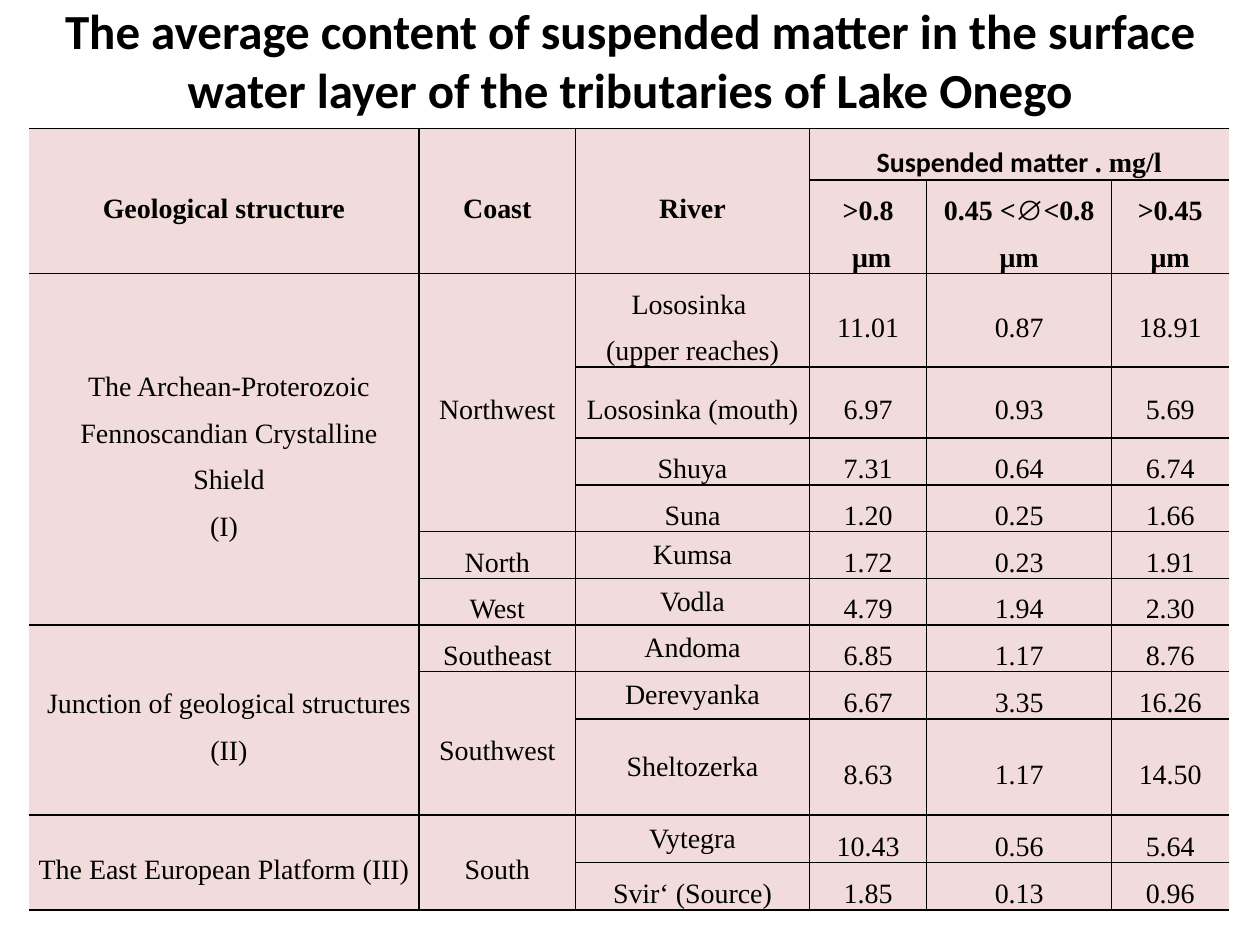
from dataclasses import dataclass

from lxml.etree import SubElement
from pptx import Presentation
from pptx.dml.color import RGBColor
from pptx.enum.text import MSO_ANCHOR as Anchor, MSO_AUTO_SIZE as AutoSize, PP_ALIGN as Align
from pptx.oxml.ns import qn
from pptx.util import Cm, Pt


@dataclass(frozen=True)
class Theme:
    """Colours, fonts and type sizes of the deck."""
    ink: RGBColor = RGBColor(0, 0, 0)
    cell: RGBColor = RGBColor(0xF2, 0xDC, 0xDB)
    heading: str = "Calibri"
    body: str = "Times New Roman"
    symbol: str = "Arial"
    title_size: Pt = Pt(28)
    cell_size: Pt = Pt(16)
    border: Pt = Pt(1)


THEME = Theme()
TITLE = "The average content of suspended matter in the surface water layer of the tributaries of Lake Onego"
TITLE_BOX = (0, 0, 25.4, 2.39)
TABLE_BOX = (0.58, 2.59, 24.2, 16.33)
COLUMN_WIDTHS = [7.87, 3.15, 4.72, 2.36, 3.73, 2.36]
ROW_HEIGHTS = [0.96] + [1.44] * 3 + [0.48] * 5 + [0.96, 1.93, 0.96, 0.96]
HEADER_ROWS = 2
RIVER_COLUMN = 2
SINGLE_SPACED_ROWS = range(6, 12)

HEADERS = {
    (0, 0): ["Geological structure"],
    (0, 1): ["Coast"],
    (0, 2): ["River"],
    (0, 3): [[("Suspended matter ", THEME.heading), (". mg/l", THEME.body)]],
    (1, 3): [">0.8", " μm"],
    (1, 4): [[("0.45 <", THEME.body), ("∅", THEME.symbol), ("<0.8", THEME.body)], "μm"],
    (1, 5): [">0.45", "μm"],
}
STRUCTURES = {
    2: ["The Archean-Proterozoic Fennoscandian Crystalline Shield", "(I)"],
    8: ["Junction of geological structures (II)"],
    11: ["The East European Platform (III)"],
}
COASTS = {2: "Northwest", 6: "North", 7: "West", 8: "Southeast", 9: "Southwest", 11: "South"}
RIVERS = [
    (["Lososinka ", "(upper reaches)"], "11.01", "0.87", "18.91"),
    (["Lososinka (mouth)"], "6.97", "0.93", "5.69"),
    (["Shuya"], "7.31", "0.64", "6.74"),
    (["Suna"], "1.20", "0.25", "1.66"),
    (["Kumsa"], "1.72", "0.23", "1.91"),
    (["Vodla"], "4.79", "1.94", "2.30"),
    (["Andoma"], "6.85", "1.17", "8.76"),
    (["Derevyanka"], "6.67", "3.35", "16.26"),
    (["Sheltozerka"], "8.63", "1.17", "14.50"),
    (["Vytegra"], "10.43", "0.56", "5.64"),
    (["Svir‘ (Source)"], "1.85", "0.13", "0.96"),
]
INDENTED = [(2, 0), (8, 0)]


def collect_cells():
    """Map each (row, column) that holds text to its paragraphs."""
    cells = dict(HEADERS)
    cells.update({(row, 0): lines for row, lines in STRUCTURES.items()})
    cells.update({(row, 1): [coast] for row, coast in COASTS.items()})
    for row, (river, *values) in enumerate(RIVERS, HEADER_ROWS):
        cells[row, RIVER_COLUMN] = river
        for column, value in enumerate(values, RIVER_COLUMN + 1):
            cells[row, column] = [value]
    return cells


def merge_groups(table):
    """Merge the header cells and the groups of structures and coasts."""
    for column in range(RIVER_COLUMN + 1):
        table.cell(0, column).merge(table.cell(HEADER_ROWS - 1, column))
    table.cell(0, 3).merge(table.cell(0, 5))
    for column, groups in enumerate((STRUCTURES, COASTS)):
        starts = [*groups, len(ROW_HEIGHTS)]
        for start, following in zip(starts, starts[1:]):
            if following - start > 1:
                table.cell(start, column).merge(table.cell(following - 1, column))


def format_span(span, font, size, bold):
    """Give a run its font, size, weight and colour."""
    span.font.name = font
    span.font.size = size
    span.font.bold = bold
    span.font.color.rgb = THEME.ink


def draw_borders(cell, open_sides):
    """Rule the sides of a cell, leaving the open ones unruled."""
    properties = cell._tc.get_or_add_tcPr()
    for side in "LRTB":
        line = SubElement(properties, qn(f"a:ln{side}"), w=str(THEME.border))
        if side in open_sides:
            SubElement(line, qn("a:noFill"))
        else:
            fill = SubElement(line, qn("a:solidFill"))
            SubElement(fill, qn("a:srgbClr"), val=str(THEME.ink))


def fill_cell(cell, lines, bold, spacing, indented):
    """Write paragraphs into a cell and format them."""
    cell.margin_left = cell.margin_right = Cm(0.08)
    cell.margin_top = cell.margin_bottom = 0
    cell.vertical_anchor = Anchor.MIDDLE
    cell.fill.solid()
    cell.fill.fore_color.rgb = THEME.cell
    frame = cell.text_frame
    for index, line in enumerate(lines):
        para = frame.add_paragraph() if index else frame.paragraphs[0]
        para.alignment = Align.CENTER
        para.line_spacing = spacing
        if indented and index == 0:
            para._p.get_or_add_pPr().set("marL", str(Cm(0.2)))
        for text, font in [(line, THEME.body)] if isinstance(line, str) else line:
            span = para.add_run()
            span.text = text
            format_span(span, font, THEME.cell_size, bold)


def place_title(page, box):
    """Put the title in its placeholder within the box."""
    title = page.shapes.title
    title.left, title.top, title.width, title.height = map(Cm, box)
    frame = title.text_frame
    frame.text = TITLE
    frame.word_wrap = True
    frame.auto_size = AutoSize.NONE
    frame.vertical_anchor = Anchor.MIDDLE
    para = frame.paragraphs[0]
    para.alignment = Align.CENTER
    format_span(para.runs[0], THEME.heading, THEME.title_size, True)


def place_table(page, box):
    """Build the table of suspended matter within the box."""
    shape = page.shapes.add_table(len(ROW_HEIGHTS), len(COLUMN_WIDTHS), *map(Cm, box))
    table = shape.table
    table.first_row = table.horz_banding = False
    for column, width in zip(table.columns, COLUMN_WIDTHS):
        column.width = Cm(width)
    for row, height in zip(table.rows, ROW_HEIGHTS):
        row.height = Cm(height)
    shape.height = Cm(box[3])
    merge_groups(table)
    for (row, column), lines in collect_cells().items():
        cell = table.cell(row, column)
        at_right = column + cell.span_width == len(COLUMN_WIDTHS)
        draw_borders(cell, ("L" if column == 0 else "") + ("R" if at_right else ""))
        single = column == RIVER_COLUMN and row in SINGLE_SPACED_ROWS
        fill_cell(cell, lines, row < HEADER_ROWS, 1.0 if single else 1.5, (row, column) in INDENTED)


def main():
    """Build the deck and save it."""
    deck = Presentation()
    deck.slide_width, deck.slide_height = Cm(25.4), Cm(19.05)
    page = deck.slides.add_slide(deck.slide_layouts.get_by_name("Title Only"))
    place_title(page, TITLE_BOX)
    place_table(page, TABLE_BOX)
    deck.save("out.pptx")


if __name__ == "__main__":
    main()
